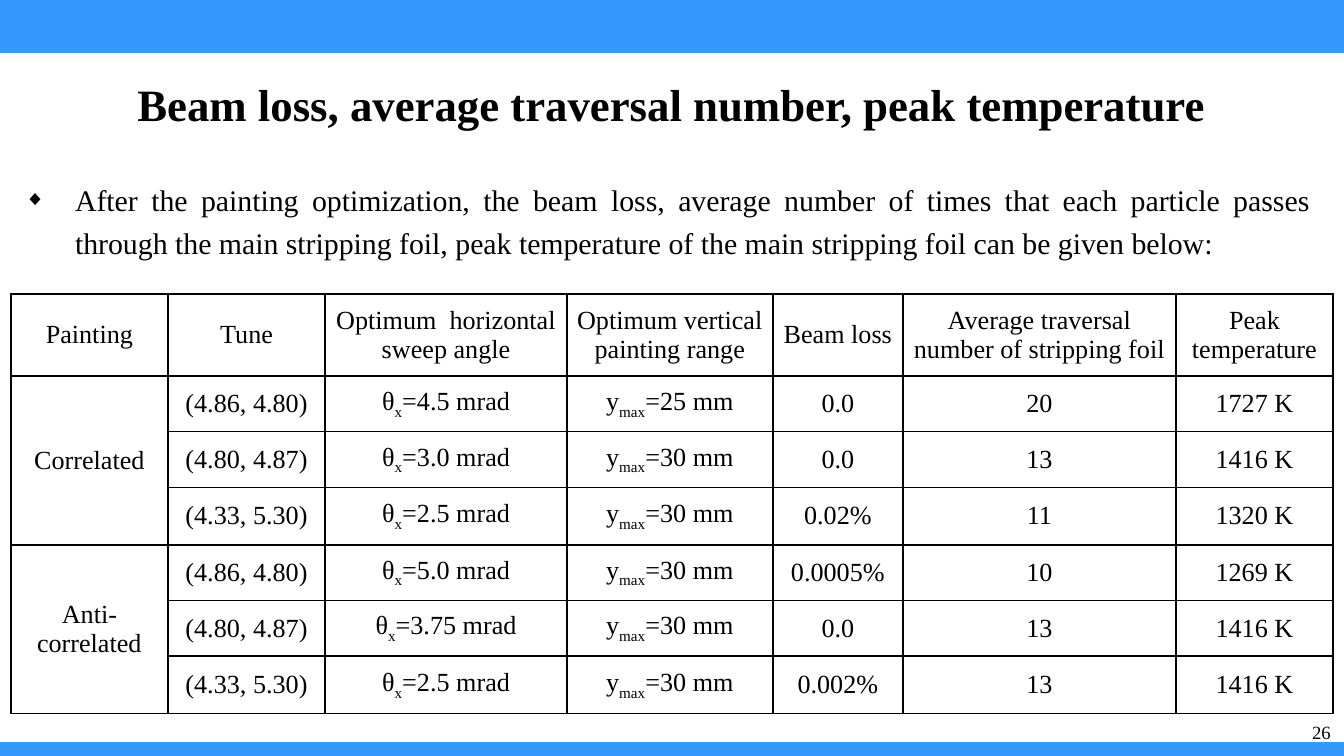
from lxml import etree
from pptx import Presentation
from pptx.dml.color import RGBColor
from pptx.enum.shapes import MSO_SHAPE
from pptx.enum.text import MSO_ANCHOR, MSO_AUTO_SIZE, PP_ALIGN
from pptx.oxml.ns import qn
from pptx.util import Pt

RECT = MSO_SHAPE.RECTANGLE
MID, TOP = MSO_ANCHOR.MIDDLE, MSO_ANCHOR.TOP
FIXED = MSO_AUTO_SIZE.NONE
CENTER, RIGHT, JUSTIFY = PP_ALIGN.CENTER, PP_ALIGN.RIGHT, PP_ALIGN.JUSTIFY
FACE, BLUE, BLACK = "Times New Roman", "3399FF", "000000"

HEAD = [
    "Painting", "Tune", "Optimum  horizontal sweep angle",
    "Optimum vertical painting range", "Beam loss",
    "Average traversal number of stripping foil", "Peak temperature",
]
TUNES = ["(4.86, 4.80)", "(4.80, 4.87)", "(4.33, 5.30)"]
GROUPS = {
    "Correlated": [
        ("4.5", 25, "0.0", 20, 1727),
        ("3.0", 30, "0.0", 13, 1416),
        ("2.5", 30, "0.02%", 11, 1320),
    ],
    "Anti-correlated": [
        ("5.0", 30, "0.0005%", 10, 1269),
        ("3.75", 30, "0.0", 13, 1416),
        ("2.5", 30, "0.002%", 13, 1416),
    ],
}
WIDTHS = [84.2, 84.2, 129.6, 110.2, 69.8, 146.2, 84.2]
HEIGHTS = [44] + [29.8, 29.8, 30.8] * 2


def color(code):
    """Turn a hex string into a colour."""
    return RGBColor.from_string(code)


def assign(item, **values):
    """Set each given attribute on the item."""
    for name, value in values.items():
        setattr(item, name, value)


def child(node, tag, **attrs):
    """Append an XML element with attributes."""
    return etree.SubElement(node, qn(tag), attrs)


class Page:
    """Hold the style and the current slide."""

    def __init__(self, deck):
        """Start a slide with a title and a body."""
        self.slide = deck.slides.add_slide(deck.slide_layouts[1])
        self.shapes = self.slide.shapes

    def band(self, top, high):
        """Draw a full-width colour band."""
        bar = self.shapes.add_shape(RECT, 0, Pt(top), Pt(720), Pt(high))
        bar.shadow.inherit = False
        bar.fill.solid()
        bar.fill.fore_color.rgb = color(BLUE)
        bar.line.color.rgb = color(BLUE)
        bar.line.width = Pt(0.75)

    def text(self, frame, words, size, align, bold=False):
        """Add a paragraph whose odd parts between underscores are subscripts."""
        para = frame.paragraphs[0]
        para.alignment = align
        for spot, part in enumerate(words.split("_")):
            run = para.add_run()
            run.text = part
            assign(run.font, name=FACE, size=Pt(size), bold=bold)
            run.font.color.rgb = color(BLACK)
            if spot % 2:
                run._r.get_or_add_rPr().set("baseline", "-25000")
        return para

    def place(self, shape, box, anchor):
        """Move a text shape and return its frame."""
        for name, value in zip(("left", "top", "width", "height"), box):
            setattr(shape, name, Pt(value))
        frame = shape.text_frame
        assign(frame, word_wrap=True, auto_size=FIXED, vertical_anchor=anchor)
        return frame

    def title(self, words, box):
        """Fill the title placeholder."""
        frame = self.place(self.shapes.title, box, MID)
        self.text(frame, words, 24, CENTER, True)

    def bullet(self, words, box):
        """Fill the body placeholder with one bullet."""
        frame = self.place(self.slide.placeholders[1], box, TOP)
        para = self.text(frame, words, 16, JUSTIFY)
        props = para._p.get_or_add_pPr()
        props.set("marL", str(Pt(27)))
        props.set("indent", str(-Pt(27)))
        child(props, "a:buSzPct", val="70000")
        child(props, "a:buFont", typeface=FACE)
        child(props, "a:buChar", char="◆")
        assign(para, line_spacing=1.2, space_before=Pt(0), space_after=Pt(9))

    def label(self, words, box):
        """Add a small right-aligned text box."""
        frame = self.place(self.shapes.add_textbox(0, 0, 0, 0), box, TOP)
        self.text(frame, words, 10, RIGHT)

    def cell(self, cell, words):
        """Border a table cell and set its text."""
        assign(cell, vertical_anchor=MID, margin_left=Pt(5),
               margin_right=Pt(5), margin_top=0, margin_bottom=0)
        props = cell._tc.get_or_add_tcPr()
        for side in "LRTB":
            line = child(props, "a:ln" + side, w=str(Pt(1)))
            child(child(line, "a:solidFill"), "a:srgbClr", val=BLACK)
        cell.fill.background()
        if words:
            self.text(cell.text_frame, words, 14, CENTER)

    def table(self, rows, left, top):
        """Add the bordered table."""
        grid = self.shapes.add_table(
            len(rows), len(WIDTHS), Pt(left), Pt(top),
            Pt(sum(WIDTHS)), Pt(sum(HEIGHTS))).table
        assign(grid, first_row=False, horz_banding=False)
        for col, wide in zip(grid.columns, WIDTHS):
            col.width = Pt(wide)
        for row, high, line in zip(grid.rows, HEIGHTS, rows):
            row.height = Pt(high)
            for cell, words in zip(row.cells, line):
                self.cell(cell, words)
        for first in range(1, len(rows), len(TUNES)):
            last = first + len(TUNES) - 1
            grid.cell(first, 0).merge(grid.cell(last, 0))


def main():
    """Build and save the slide."""
    deck = Presentation()
    assign(deck, slide_width=Pt(720), slide_height=Pt(405))
    page = Page(deck)
    page.band(0, 28)
    page.band(398, 7)
    page.title("Beam loss, average traversal number, peak temperature",
               (11.5, 28, 696, 55))
    page.bullet("After the painting optimization, the beam loss, average number "
                "of times that each particle passes through the main stripping "
                "foil, peak temperature of the main stripping foil can be given "
                "below:", (6, 90, 703.5, 67.5))
    rows = [HEAD]
    for name, group in GROUPS.items():
        for spot, (tune, data) in enumerate(zip(TUNES, group)):
            angle, reach, loss, count, heat = data
            rows.append(["" if spot else name, tune, f"θ_x_={angle} mrad",
                         f"y_max_={reach} mm", loss, str(count), f"{heat} K"])
    page.table(rows, 5.8, 157.5)
    page.label("26", (692, 382.5, 28, 16))
    deck.save("out.pptx")


if __name__ == "__main__":
    main()
